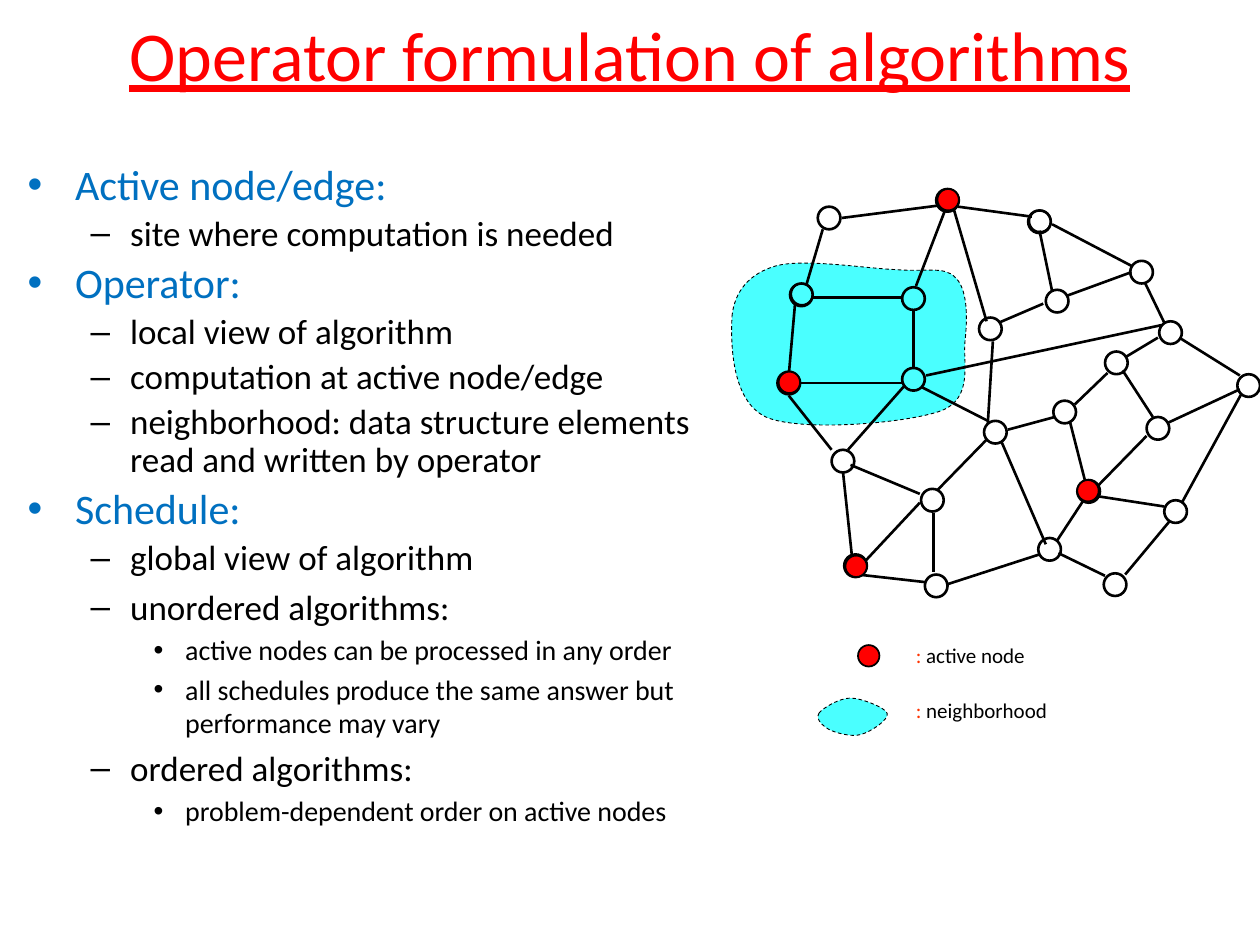
from pptx import Presentation
from pptx.dml.color import RGBColor
from pptx.enum.dml import MSO_LINE
from pptx.enum.shapes import MSO_CONNECTOR, MSO_SHAPE
from pptx.enum.text import MSO_ANCHOR, MSO_AUTO_SIZE, PP_ALIGN
from pptx.oxml.ns import qn
from pptx.util import Inches, Pt
from lxml.etree import SubElement

RED = RGBColor(0xFF, 0x00, 0x00)
ORANGE = RGBColor(0xFF, 0x33, 0x00)
BLUE = RGBColor(0x00, 0x70, 0xC0)
CYAN = RGBColor(0x00, 0xFF, 0xFF)
BLACK = RGBColor(0x00, 0x00, 0x00)
FONT = "Calibri"

TITLE = "Operator formulation of algorithms"
# (level, line spacing, text)
OUTLINE = [
    (0, 0.9, "Active node/edge:"),
    (1, 0.9, "site where computation is needed"),
    (0, 0.9, "Operator:"),
    (1, 0.9, "local view of algorithm"),
    (1, 0.9, "computation at active node/edge"),
    (1, 0.9, "neighborhood: data structure elements read and written by operator"),
    (0, 0.9, "Schedule:"),
    (1, 0.9, "global view of algorithm"),
    (1, 1.0, "unordered algorithms:"),
    (2, 1.0, "active nodes can be processed in any order"),
    (2, 1.0, "all schedules produce the same answer but performance may vary"),
    (1, 1.0, "ordered algorithms:"),
    (2, 1.0, "problem-dependent order on active nodes"),
]
LEVEL_STYLE = [(24, BLUE), (20, BLACK), (16, BLACK)]

# Graph nodes: left and top in inches
NODES = [
    (6.27, 2.25), (6.17, 2.95), (7.16, 2.92), (7.81, 3.34), (6.6, 3.57), (7.31, 3.88),
    (6.7, 4.4), (8.76, 4.55), (7.34, 4.56), (7.77, 2.52), (8.36, 3.18), (8.24, 4.27),
    (6.49, 1.64), (7.43, 1.5), (7.16, 2.28), (8.16, 1.67), (8.3, 2.3), (8.97, 2.07),
    (8.55, 3.81), (8.77, 2.79), (9.2, 2.55), (9.1, 3.31), (9.24, 3.97), (9.82, 2.97),
]
# Graph edges: from x, y to x, y in inches
EDGES = [
    (6.53, 1.82, 6.4, 2.26), (6.68, 1.73, 7.46, 1.63), (6.45, 2.36, 7.15, 2.36),
    (7.5, 1.67, 7.27, 2.27), (6.31, 2.41, 6.26, 2.98), (6.26, 3.14, 6.6, 3.57),
    (6.73, 3.57, 7.18, 3.06), (6.34, 3.04, 7.16, 3.04), (7.25, 2.45, 7.25, 2.91),
    (7.57, 1.66, 7.83, 2.55), (6.76, 4.4, 6.69, 3.74), (6.87, 4.45, 7.3, 3.99),
    (6.75, 3.69, 7.3, 3.92), (7.44, 3.89, 7.83, 3.49), (7.31, 3.07, 7.84, 3.34),
    (6.81, 4.56, 7.34, 4.62), (7.41, 4.07, 7.41, 4.54), (7.51, 4.64, 8.25, 4.4),
    (7.6, 1.64, 8.19, 1.72), (8.25, 1.83, 8.35, 2.31), (7.93, 2.56, 8.28, 2.41),
    (8.35, 1.78, 8.98, 2.11), (8, 3.41, 8.37, 3.31), (7.88, 2.71, 7.84, 3.36),
    (8.53, 3.21, 8.79, 2.96), (8.39, 4.29, 8.6, 3.97), (8.4, 4.39, 8.77, 4.57),
    (8.49, 3.34, 8.61, 3.81), (8.7, 3.87, 9.1, 3.46), (8.91, 2.94, 9.15, 3.31),
    (8.46, 2.35, 8.98, 2.16), (9.26, 3.36, 9.84, 3.09), (8.94, 2.83, 9.19, 2.68),
    (9.09, 2.25, 9.24, 2.56), (9.36, 2.68, 9.84, 2.98), (8.93, 4.56, 9.28, 4.14),
    (9.38, 3.99, 9.85, 3.13), (8.72, 3.94, 9.24, 4.02), (7.95, 3.51, 8.3, 4.32),
    (7.35, 2.98, 9.22, 2.58),
]
# Second rings drawn on top of nodes: left, top, fill
RINGS = [
    (6.28, 2.25, None), (6.71, 4.41, RED), (8.55, 3.81, RED),
    (8.17, 1.67, None), (6.18, 2.95, RED), (7.44, 1.5, RED),
]
NODE_SIZE, RING_SIZE = 0.18, 0.17

# Closed outlines: start, then cubic curves (control, control, end)
NEIGHBORHOOD = [
    (5.81, 2.51), (5.83, 2.31), (5.95, 2.17), (6.16, 2.11),
    (6.38, 2.05), (6.87, 2.13), (7.11, 2.14), (7.35, 2.16), (7.49, 2.11), (7.58, 2.2),
    (7.68, 2.29), (7.68, 2.52), (7.66, 2.7), (7.64, 2.87), (7.73, 3.16), (7.47, 3.26),
    (7.2, 3.36), (6.35, 3.43), (6.08, 3.31), (5.8, 3.18), (5.8, 2.71), (5.81, 2.51),
]
LEGEND_BLOB = [
    (6.5, 5.66), (6.53, 5.62), (6.66, 5.54), (6.75, 5.54),
    (6.84, 5.54), (7.03, 5.62), (7.04, 5.66), (7.06, 5.71), (6.91, 5.81), (6.83, 5.83),
    (6.76, 5.85), (6.64, 5.82), (6.58, 5.79), (6.53, 5.76), (6.47, 5.71), (6.5, 5.66),
]
LEGEND_DOT = (6.81, 5.12)
LEGEND = [("active node", 5.07, 1.14), ("neighborhood", 5.51, 1.31)]


def place(shape, left, top, width, height):
    shape.left, shape.top = Inches(left), Inches(top)
    shape.width, shape.height = Inches(width), Inches(height)


def style_span(span, size, color):
    span.font.name, span.font.size = FONT, Pt(size)
    span.font.color.rgb = color


def add_blob(shapes, outline):
    """Dashed translucent area bounded by cubic curves."""
    points = [(Inches(x), Inches(y)) for x, y in outline]
    builder = shapes.build_freeform(*points[0], scale=1.0)
    builder.add_line_segments(points[1:], close=True)
    blob = builder.convert_to_shape()
    # Join every three straight segments into one curve
    segments = list(blob._element.iter(qn("a:lnTo")))
    for first in range(0, len(segments), 3):
        curve = segments[first].makeelement(qn("a:cubicBezTo"))
        segments[first].addprevious(curve)
        for segment in segments[first:first + 3]:
            curve.append(segment[0])
            segment.getparent().remove(segment)
    blob.shadow.inherit = False
    blob.fill.solid()
    blob.fill.fore_color.rgb = CYAN
    color = blob._element.spPr.find(qn("a:solidFill"))[0]
    SubElement(color, qn("a:alpha")).set("val", "71000")
    blob.line.color.rgb, blob.line.width = BLACK, Pt(0.5)
    blob.line.dash_style = MSO_LINE.DASH


def add_node(shapes, left, top, size, line_width, color=None):
    node = shapes.add_shape(MSO_SHAPE.OVAL, Inches(left), Inches(top),
                            Inches(size), Inches(size))
    node.shadow.inherit = False
    if color is None:
        node.fill.background()
    else:
        node.fill.solid()
        node.fill.fore_color.rgb = color
    node.line.color.rgb, node.line.width = BLACK, Pt(line_width)


def add_edge(shapes, ends):
    edge = shapes.add_connector(MSO_CONNECTOR.STRAIGHT, *(Inches(end) for end in ends))
    edge.line.color.rgb, edge.line.width = BLACK, Pt(1.5)
    SubElement(edge._element.spPr, qn("a:effectLst"))


def add_text(page):
    title = page.shapes.title
    place(title, 0.5, -0.2, 9, 1.25)
    title.text_frame.text = TITLE
    title.text_frame.vertical_anchor = MSO_ANCHOR.MIDDLE
    heading = title.text_frame.paragraphs[0]
    heading.alignment = PP_ALIGN.CENTER
    style_span(heading.runs[0], 40, RED)
    heading.runs[0].font.underline = True

    body = page.placeholders[1]
    place(body, 0.12, 1.25, 5.67, 6.83)
    frame = body.text_frame
    frame.auto_size = MSO_AUTO_SIZE.NONE
    frame.text = "\n".join(text for _, _, text in OUTLINE)
    for para, (level, spacing, _) in zip(frame.paragraphs, OUTLINE):
        para.level, para.line_spacing = level, spacing
        style_span(para.runs[0], *LEVEL_STYLE[level])


def add_graph(shapes):
    add_blob(shapes, NEIGHBORHOOD)
    for left, top in NODES:
        add_node(shapes, left, top, NODE_SIZE, 1.5)
    for ends in EDGES:
        add_edge(shapes, ends)


def add_legend(shapes):
    add_node(shapes, *LEGEND_DOT, RING_SIZE, 1, RED)
    add_blob(shapes, LEGEND_BLOB)
    for label, top, width in LEGEND:
        box = shapes.add_textbox(Inches(7.17), Inches(top), Inches(width), Inches(0.28))
        box.text_frame.word_wrap = False
        box.text_frame.auto_size = MSO_AUTO_SIZE.SHAPE_TO_FIT_TEXT
        para = box.text_frame.paragraphs[0]
        para.line_spacing = 0.9
        for text, color in ((": ", ORANGE), (label, BLACK)):
            span = para.add_run()
            span.text = text
            style_span(span, 12, color)


def main():
    deck = Presentation()
    deck.slide_width, deck.slide_height = Inches(10), Inches(7.5)
    page = deck.slides.add_slide(deck.slide_layouts[1])
    add_text(page)
    shapes = page.shapes.add_group_shape().shapes
    add_graph(shapes)
    add_legend(shapes)
    for left, top, color in RINGS:
        add_node(shapes, left, top, RING_SIZE, 1, color)
    deck.save("out.pptx")


if __name__ == "__main__":
    main()
